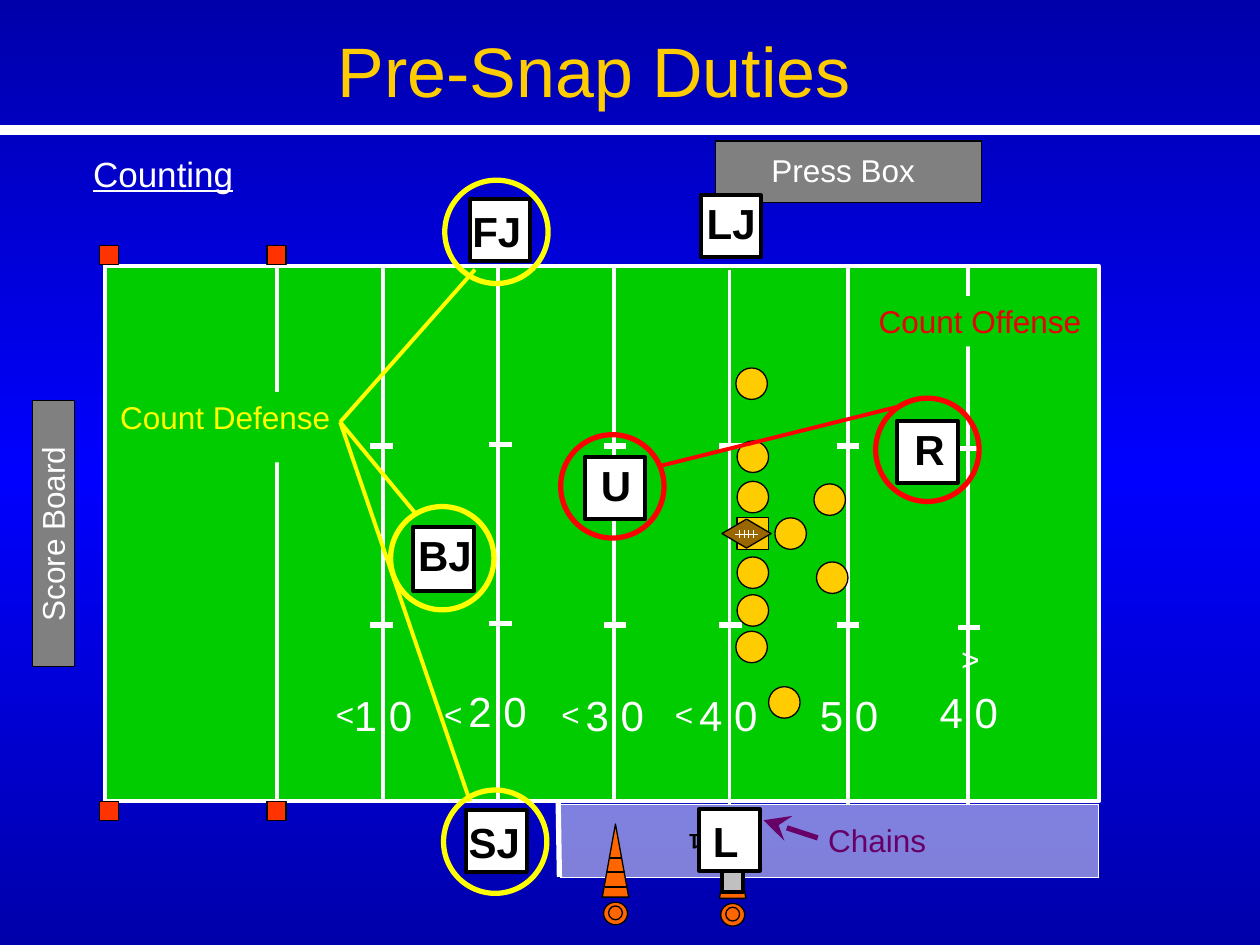
from copy import deepcopy

from pptx import Presentation
from pptx.dml.color import RGBColor
from pptx.enum.dml import MSO_LINE
from pptx.enum.shapes import MSO_CONNECTOR, MSO_SHAPE
from pptx.enum.text import MSO_ANCHOR, PP_ALIGN
from pptx.oxml.ns import qn
from pptx.util import Inches, Pt
from lxml.etree import SubElement

COLORS = {
    "navy": "0000AA", "blue": "0000FF", "white": "FFFFFF", "black": "000000",
    "gray": "808080", "silver": "C0C0C0", "grass": "00CC00", "pylon": "FF3300",
    "cone": "FF6600", "gold": "FFCC00", "leather": "996600", "red": "FF0000",
    "dark red": "EA0000", "yellow": "FFFF00", "purple": "660066",
}
RECT, OVAL = MSO_SHAPE.RECTANGLE, MSO_SHAPE.OVAL
FONT = "Arial"


def color(name):
    return RGBColor.from_string(COLORS[name])


def add_box(kind, left, top, width, height, fill=None, line=None, weight=0.75,
            text=None, size=18, ink="white", bold=False,
            align=PP_ALIGN.RIGHT, wrap=False):
    """Add a preset shape, or a text box when kind is None."""
    place = [Inches(value) for value in (left, top, width, height)]
    if kind is None:
        box = page.shapes.add_textbox(*place)
    else:
        box = page.shapes.add_shape(kind, *place)
        box.shadow.inherit = False
        if fill:
            box.fill.solid()
            box.fill.fore_color.rgb = color(fill)
        else:
            box.fill.background()
        if line:
            box.line.color.rgb = color(line)
            box.line.width = Pt(weight)
        else:
            box.line.fill.background()
    if text:
        frame = box.text_frame
        frame.word_wrap = wrap
        frame.vertical_anchor = MSO_ANCHOR.TOP
        frame.text = text
        para = frame.paragraphs[0]
        para.alignment = align
        font = para.runs[0].font
        font.name, font.size, font.bold = FONT, Pt(size), bold
        font.color.rgb = color(ink)
    return box


def add_line(x1, y1, x2, y2, ink="white", weight=2.25):
    line = page.shapes.add_connector(
        MSO_CONNECTOR.STRAIGHT, Inches(x1), Inches(y1), Inches(x2), Inches(y2))
    line.line.color.rgb = color(ink)
    line.line.width = Pt(weight)
    SubElement(line._element.spPr, qn("a:effectLst"))
    return line


deck = Presentation()
deck.slide_width, deck.slide_height = Inches(10), Inches(7.5)
page = deck.slides.add_slide(deck.slide_layouts[5])

# Background: dark edges, bright middle
background = page.background.fill
background.gradient()
background.gradient_angle = 270
stops = background._fill._gradFill.gsLst
stops.append(deepcopy(stops[0]))
for stop, name, position in zip(background.gradient_stops,
                                ("navy", "blue", "navy"), (0, 0.5, 1)):
    stop.color.rgb = color(name)
    stop.position = position

# Title and heading
title = page.shapes.title
title.left, title.top, title.width, title.height = (
    Inches(value) for value in (2.58, 0.17, 6.15, 0.77))
title.text_frame.text = "Pre-Snap Duties"
title_para = title.text_frame.paragraphs[0]
title_para.alignment = PP_ALIGN.LEFT
title_font = title_para.runs[0].font
title_font.name, title_font.size = FONT, Pt(40)
title_font.color.rgb = color("gold")
add_line(0, 1.03, 10, 1.03, weight=6)
heading = add_box(None, 0.64, 1.16, 1.6, 0.43, text="Counting", size=20,
                  align=PP_ALIGN.LEFT, wrap=True)
heading.text_frame.paragraphs[0].runs[0].font.underline = True

# Stadium buildings
add_box(RECT, 5.68, 1.12, 2.11, 0.49, "gray", "black")
add_box(None, 6.02, 1.15, 1.34, 0.4, text="Press Box")
add_box(RECT, 0.26, 3.18, 0.33, 2.11, "gray", "black")
score_label = add_box(None, -0.38, 4.04, 1.59, 0.4, text="Score Board")
score_label.rotation = 270

# Field, goal line and pylons
add_box(RECT, 0.83, 2.11, 7.89, 4.25, "grass", "white", 2.25)
add_line(2.2, 2.11, 2.2, 6.36)
for left in (0.79, 2.12):
    for top in (1.95, 6.36):
        add_box(RECT, left, top, 0.15, 0.15, "pylon", "black")

# Yard lines: line x, line top, hash left, hash top, number, number left and top
yard_lines = [
    (3.04, 2.11, 2.94, 3.54, "1 0", 2.61, 5.42),
    (3.95, 2.11, 3.88, 3.53, "2 0", 3.52, 5.39),
    (4.87, 2.11, 4.79, 3.54, "3 0", 4.45, 5.42),
    (5.79, 2.14, 5.71, 3.54, "4 0", 5.35, 5.42),
    (6.73, 2.13, 6.64, 3.54, "5 0", 6.31, 5.42),
    (7.68, 2.13, 7.6, 3.56, "4 0", 7.26, 5.4),
]
for x, top, hash_left, hash_top, number, left, number_top in yard_lines:
    add_line(x, top, x, top + 4.25)
    for y in (hash_top, hash_top + 1.42):
        add_line(hash_left, y, hash_left + 0.18, y, weight=3)
    add_box(None, left, number_top, 0.76, 0.5, text=number, size=24, wrap=True)
for left in (2.56, 3.42, 4.35, 5.25):
    add_box(None, left, 5.47, 0.35, 0.4, text="<")
far_arrow = add_box(None, 7.53, 5.06, 0.35, 0.4, text="<")
far_arrow.rotation = 180

# Team area on the sideline
add_line(4.43, 6.36, 4.44, 6.96, weight=3)
team_area = add_box(RECT, 4.44, 6.38, 4.28, 0.58, "white", "white", 0.25)
team_area.line.dash_style = MSO_LINE.ROUND_DOT
fill_color = team_area._element.spPr.find(qn("a:solidFill"))[0]
SubElement(fill_color, qn("a:alpha")).set("val", "50000")

# Cones with their bases, and the down marker
for left, top in ((5.71, 6.55), (4.78, 6.54)):
    center = left + 0.11
    add_box(MSO_SHAPE.ISOSCELES_TRIANGLE, left, top, 0.21, 0.58, "cone", "black")
    add_box(OVAL, left + 0.01, top + 0.62, 0.19, 0.18, "cone", "black")
    add_box(OVAL, left + 0.05, top + 0.65, 0.11, 0.11, None, "black")
    for drop, half in ((0.27, 0.05), (0.38, 0.07), (0.5, 0.09)):
        add_line(center - half, top + drop, center + half, top + drop, "black", 0.75)
add_box(RECT, 5.73, 6.87, 0.17, 0.21, "silver", "black", 2.25)
down_number = add_box(None, 5.37, 6.54, 0.29, 0.3, text="1", size=12,
                      ink="black", bold=True, align=PP_ALIGN.LEFT)
down_number.rotation = 180

# Officials: square left, top, height, then letters left and top
officials = [
    ("FJ", 3.73, 1.58, 0.49, 3.65, 1.58),
    ("U", 4.64, 3.63, 0.49, 4.67, 3.6),
    ("SJ", 3.7, 6.43, 0.49, 3.62, 6.43),
    ("R", 7.12, 3.34, 0.49, 7.16, 3.31),
    ("L", 5.55, 6.42, 0.49, 5.56, 6.42),
    ("LJ", 5.56, 1.55, 0.49, 5.51, 1.52),
    ("BJ", 3.28, 4.18, 0.51, 3.22, 4.15),
]
for letters, left, top, height, text_left, text_top in officials:
    add_box(RECT, left, top, 0.48, height, "white", "black", 2.25)
    add_box(None, text_left, text_top, 0.34 * len(letters), 0.5, text=letters,
            size=24, ink="black", bold=True, align=PP_ALIGN.LEFT, wrap=True)

# Offense: the center is square, the others round
add_box(RECT, 5.85, 4.11, 0.25, 0.25, "gold", "black")
players = [(5.85, 3.82), (5.85, 3.5), (5.85, 4.42), (5.85, 4.72), (6.15, 4.11),
           (6.1, 5.45), (5.84, 5.01), (5.84, 2.92), (6.46, 3.84), (6.48, 4.46)]
for left, top in players:
    add_box(OVAL, left, top, 0.25, 0.25, "gold", "black")

# Ball with laces
add_box(MSO_SHAPE.FLOWCHART_DECISION, 5.73, 4.12, 0.39, 0.23, "leather", "black")
add_line(5.83, 4.24, 6.02, 4.24, weight=0.75)
for x in (5.87, 5.91, 5.94, 5.98):
    add_line(x, 4.21, x, 4.27, weight=0.75)

# Rings around the counting officials
rings = [(6.95, 3.16, "red"), (4.45, 3.45, "red"), (3.53, 1.43, "yellow"),
         (3.1, 4.02, "yellow"), (3.52, 6.27, "yellow")]
for left, top, ink in rings:
    add_box(OVAL, left, top, 0.82, 0.82, None, ink, 3)

# Labels
add_box(RECT, 6.87, 2.35, 1.81, 0.4, "grass", text="Count Offense", ink="dark red")
add_box(RECT, 2.07, 3.12, 0.25, 0.43, "grass", "grass")
add_box(RECT, 0.86, 3.24, 1.76, 0.43, "grass")
add_box(RECT, 0.86, 3.11, 1.86, 0.4, "grass", text="Count Defense", ink="yellow")
add_box(None, 6.47, 6.47, 0.98, 0.4, text="Chains", ink="purple")
pointer = add_line(6.49, 6.65, 6.06, 6.51, "purple", 3)
arrowhead = SubElement(pointer.line._get_or_add_ln(), qn("a:tailEnd"))
for key, value in (("type", "stealth"), ("w", "lg"), ("len", "lg")):
    arrowhead.set(key, value)

# Links between labels and officials
for end_x, end_y in ((3.73, 6.36), (3.31, 4.09), (3.77, 2.14)):
    add_line(2.7, 3.35, end_x, end_y, "yellow")
add_line(5.23, 3.7, 7.16, 3.22, "red")

deck.save("out.pptx")
